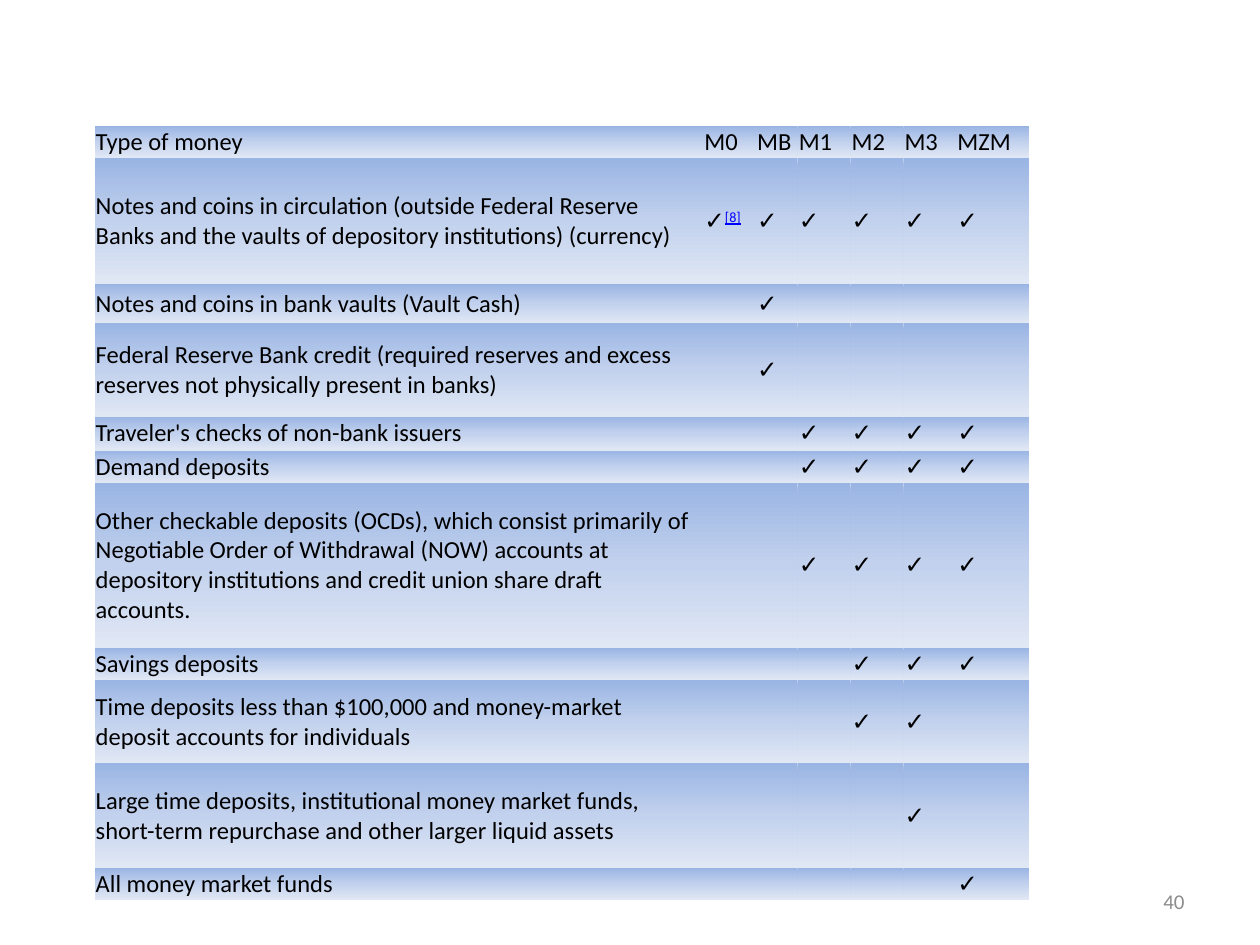
from copy import deepcopy
from lxml import etree
from pptx import Presentation
from pptx.dml.color import RGBColor
from pptx.enum import text
from pptx.oxml import ns, parse_xml
from pptx.util import Inches, Pt

COLORS = {"text": "000000", "link": "0000FF", "number": "8C8C8C",
          "top": "9AB5E4", "middle": "C2D1ED", "bottom": "E1E8F5"}
FONT = "Calibri"
MEASURES = ["M0", "MB", "M1", "M2", "M3", "MZM"]
COLUMN_WIDTHS = [4.83, 0.42, 0.33, 0.42, 0.42, 0.42, 0.58]
MONEY_TYPES = [
    ("Notes and coins in circulation (outside Federal Reserve Banks and the vaults "
     "of depository institutions) (currency)", 1, MEASURES),
    ("Notes and coins in bank vaults (Vault Cash)", 0.31, ["MB"]),
    ("Federal Reserve Bank credit (required reserves and excess reserves not "
     "physically present in banks)", 0.74, ["MB"]),
    ("Traveler's checks of non-bank issuers", 0.27, ["M1", "M2", "M3", "MZM"]),
    ("Demand deposits", 0.25, ["M1", "M2", "M3", "MZM"]),
    ("Other checkable deposits (OCDs), which consist primarily of Negotiable Order "
     "of Withdrawal (NOW) accounts at depository institutions and credit union "
     "share draft accounts.", 1.31, ["M1", "M2", "M3", "MZM"]),
    ("Savings deposits", 0.25, ["M2", "M3", "MZM"]),
    ("Time deposits less than $100,000 and money-market deposit accounts for "
     "individuals", 0.66, ["M2", "M3"]),
    ("Large time deposits, institutional money market funds, short-term repurchase "
     "and other larger liquid assets", 0.83, ["M3"]),
    ("All money market funds", 0.25, ["MZM"]),
]


def format_run(run, size, color):
    run.font.name = FONT
    run.font.size = Pt(size)
    run.font.color.rgb = RGBColor.from_string(COLORS[color])


presentation = Presentation()
presentation.slide_width = Inches(10)
presentation.slide_height = Inches(7.5)
slide = presentation.slides.add_slide(presentation.slide_layouts[6])

rows = [(0.25, ["Type of money"] + MEASURES)]
for name, height, included in MONEY_TYPES:
    rows.append((height, [name] + ["✓" if measure in included else "" for measure in MEASURES]))

stops = "".join(f'<a:gs pos="{position}"><a:srgbClr val="{COLORS[name]}"/></a:gs>'
                for position, name in [(0, "top"), (50000, "middle"), (100000, "bottom")])
gradient = parse_xml(f'<a:gradFill {ns.nsdecls("a")} rotWithShape="1"><a:gsLst>{stops}</a:gsLst>'
                     '<a:lin ang="5400000" scaled="0"/></a:gradFill>')

table_frame = slide.shapes.add_table(len(rows), len(COLUMN_WIDTHS), Inches(0.75), Inches(1),
                                     Inches(sum(COLUMN_WIDTHS)),
                                     Inches(sum(height for height, values in rows)))
table = table_frame.table
table.first_row = False
table.horz_banding = False
style = table_frame._element.find(".//" + ns.qn("a:tableStyleId"))
style.text = "{2D5ABB26-0587-4C30-8999-92F81FD0307C}"
for column, width in zip(table.columns, COLUMN_WIDTHS):
    column.width = Inches(width)

for row, (height, values) in zip(table.rows, rows):
    row.height = Inches(height)
    for cell, value in zip(row.cells, values):
        cell.margin_left = cell.margin_right = Inches(0.01)
        cell.margin_top = cell.margin_bottom = Inches(0.01)
        cell.vertical_anchor = text.MSO_ANCHOR.MIDDLE
        cell._tc.get_or_add_tcPr().append(deepcopy(gradient))
        paragraph = cell.text_frame.paragraphs[0]
        if value:
            paragraph.text = value
            format_run(paragraph.runs[0], 14, "text")
        else:
            etree.SubElement(paragraph._p, ns.qn("a:endParaRPr"), sz="1400")

reference = table.cell(1, 1).text_frame.paragraphs[0].add_run()
reference.text = "[8]"
format_run(reference, 14, "link")
reference.font.underline = True
reference.font._element.set("baseline", "30000")

number_box = slide.shapes.add_textbox(Inches(7.17), Inches(6.95), Inches(2.33), Inches(0.4))
number_box.text_frame.word_wrap = True
number_box.text_frame.vertical_anchor = text.MSO_ANCHOR.MIDDLE
paragraph = number_box.text_frame.paragraphs[0]
paragraph.text = "40"
paragraph.alignment = text.PP_ALIGN.RIGHT
format_run(paragraph.runs[0], 12, "number")

presentation.save("out.pptx")
